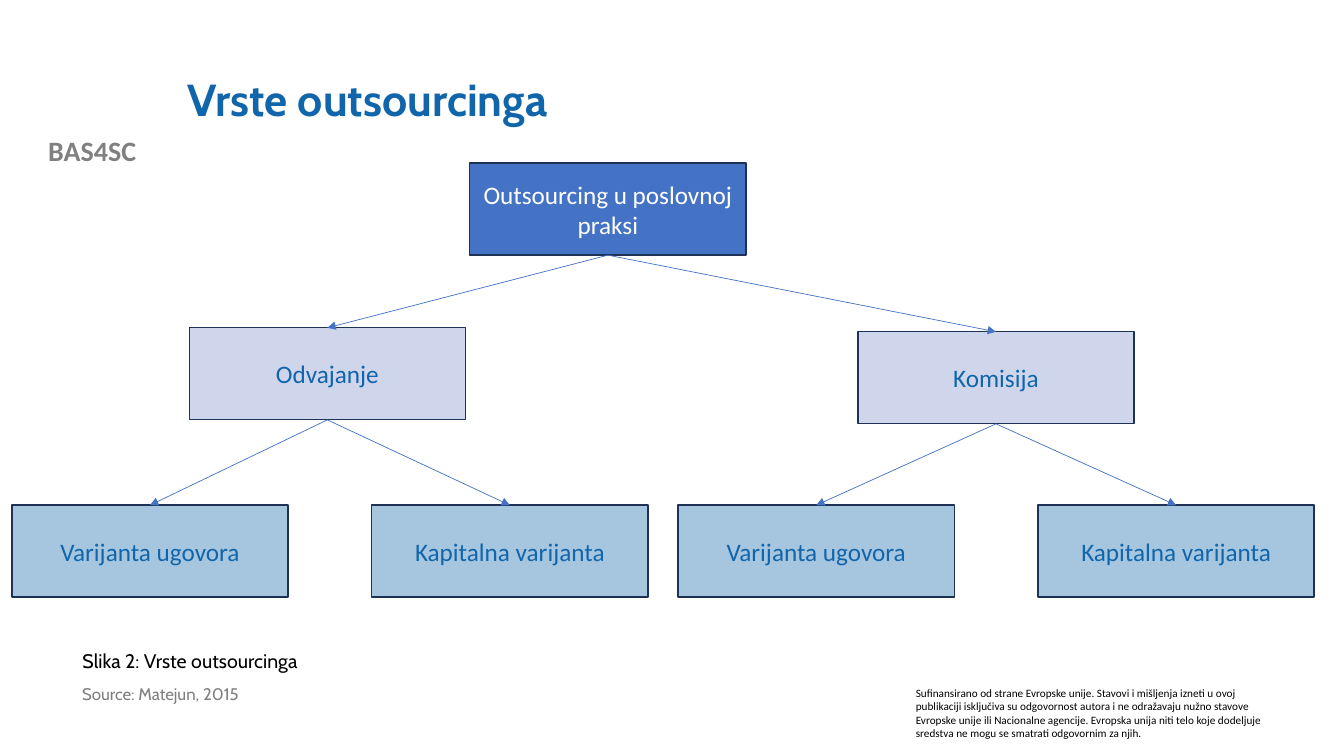
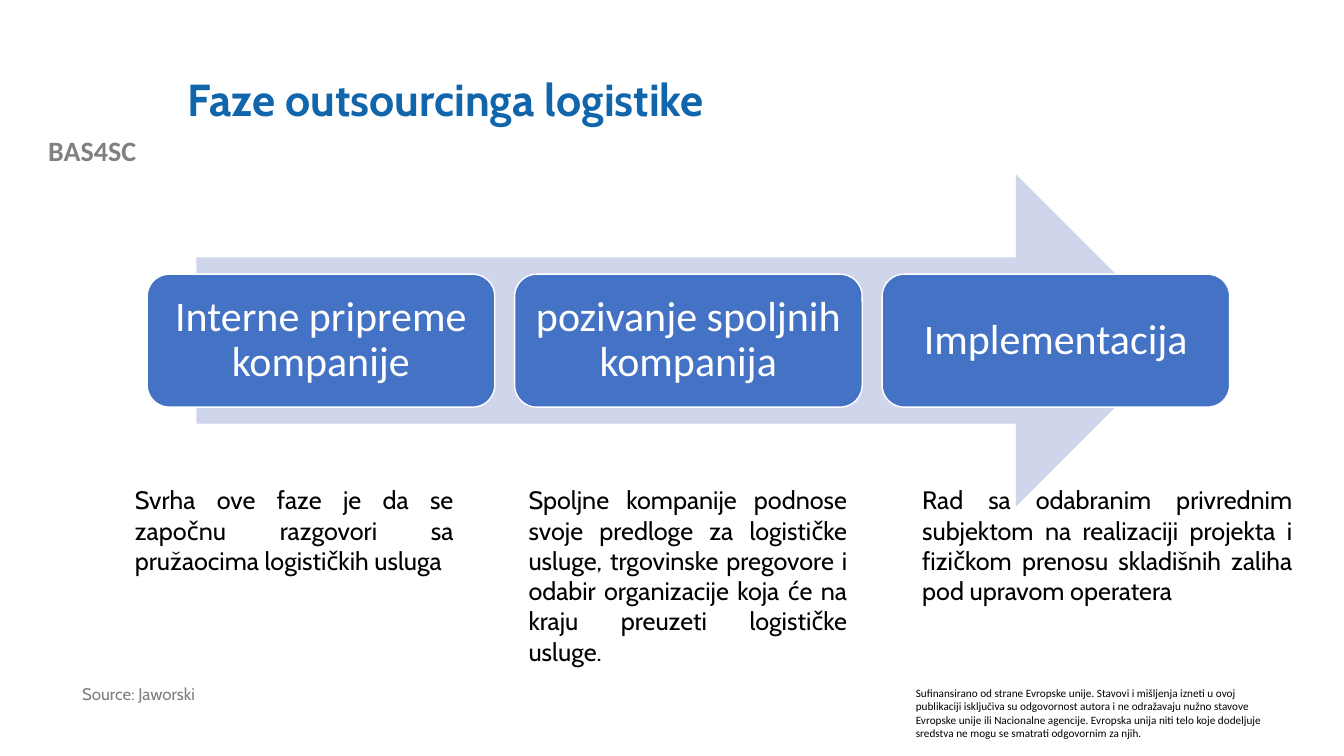
from pptx import Presentation
from pptx.dml.color import RGBColor
from pptx.enum.shapes import MSO_CONNECTOR, MSO_SHAPE
from pptx.enum.text import MSO_ANCHOR, PP_ALIGN
from pptx.oxml.ns import qn
from pptx.util import Cm, Pt
from lxml import etree

RECT, ROUND = MSO_SHAPE.RECTANGLE, MSO_SHAPE.ROUNDED_RECTANGLE
ARROW, LINE = MSO_SHAPE.RIGHT_ARROW, MSO_CONNECTOR.STRAIGHT
MID, TOP = MSO_ANCHOR.MIDDLE, MSO_ANCHOR.TOP
LEFT, CENTER, FULL = PP_ALIGN.LEFT, PP_ALIGN.CENTER, PP_ALIGN.JUSTIFY
SIDES = ("left", "top", "right", "bottom")

HUES = {
    "title": "1065AB", "brand": "808080", "source": "7F7F7F",
    "black": "000000", "white": "FFFFFF", "blue": "4472C4",
    "pale": "CFD5EA", "sky": "A6C6E0", "edge": "1E3256",
}

# Text styles: font values, colour, alignment, line spacing, anchor
STYLES = {
    "title": (dict(name="Cabin", size=Pt(32), bold=True), "title", LEFT, 0.9, MID),
    "brand": (dict(name="Calibri", size=Pt(20), bold=True), "brand", CENTER, 1.0, TOP),
    "legal": (dict(name="Calibri", size=Pt(8)), "black", LEFT, 1.0, TOP),
    "source": (dict(name="Cabin", size=Pt(12)), "source", LEFT, 0.9, TOP),
    "caption": (dict(name="Cabin", size=Pt(14)), "black", LEFT, 1.0, TOP),
    "body": (dict(name="Cabin", size=Pt(18)), "black", FULL, 1.0, TOP),
    "root": (dict(name="Calibri", size=Pt(18)), "white", CENTER, 1.0, MID),
    "node": (dict(name="Calibri", size=Pt(18)), "title", CENTER, 1.0, MID),
    "phase": (dict(name="Calibri", size=Pt(30)), "white", CENTER, 0.9, MID),
}

BRAND = "BAS4SC"
LEGAL = (
    "Sufinansirano od strane Evropske unije. Stavovi i mišljenja izneti u ovoj "
    "publikaciji isključiva su odgovornost autora i ne odražavaju nužno stavove "
    "Evropske unije ili Nacionalne agencije. Evropska unija niti telo koje "
    "dodeljuje sredstva ne mogu se smatrati odgovornim za njih."
)

# Tree: text, left, top, fill, style, children (cm)
LEAF = 12.73


def pair(left, right):
    return [("Varijanta ugovora", left, LEAF, "sky", "node", []),
            ("Kapitalna varijanta", right, LEAF, "sky", "node", [])]


TREE = ("Outsourcing u poslovnoj praksi", 11.84, 4.11, "blue", "root", [
    ("Odvajanje", 4.77, 8.26, "pale", "node", pair(0.3, 9.37)),
    ("Komisija", 21.62, 8.36, "pale", "node", pair(17.09, 26.16)),
])
NODE = (6.96, 2.32)

# Phases: name, note, note width (cm)
PHASES = [
    ("Interne pripreme kompanije",
     "Svrha ove faze je da se započnu razgovori sa pružaocima "
     "logističkih usluga", 8.53),
    ("pozivanje spoljnih kompanija",
     "Spoljne kompanije podnose svoje predloge za logističke usluge, "
     "trgovinske pregovore i odabir organizacije koja će na kraju preuzeti "
     "logističke usluge.", 8.53),
    ("Implementacija",
     "Rad sa odabranim privrednim subjektom na realizaciji projekta i fizičkom "
     "prenosu skladišnih zaliha pod upravom operatera", 9.83),
]


def color(key):
    return RGBColor.from_string(HUES[key])


def write(shape, text, style):
    font, hue, align, space, anchor = STYLES[style]
    frame = shape.text_frame
    frame.word_wrap = True
    frame.vertical_anchor = anchor
    para = frame.paragraphs[0]
    para.text = text
    para.alignment = align
    para.line_spacing = space
    for key, value in font.items():
        setattr(para.font, key, value)
    para.font.color.rgb = color(hue)


def add_text(slide, text, style, *box):
    write(slide.shapes.add_textbox(*map(Cm, box)), text, style)


def add_box(slide, kind, fill, edge, *box):
    shape = slide.shapes.add_shape(kind, *map(Cm, box))
    shape.shadow.inherit = False
    shape.fill.solid()
    shape.fill.fore_color.rgb = color(fill)
    if edge:
        shape.line.color.rgb = color(edge)
        shape.line.width = Pt(1)
    else:
        shape.line.fill.background()
    return shape


def link(slide, start, end):
    # Bottom centre of the parent to top centre of the child
    line = slide.shapes.add_connector(LINE, 0, 0, 0, 0)
    line.begin_connect(start, 2)
    line.end_connect(end, 0)
    line.line.color.rgb = color("blue")
    line.line.width = Pt(0.5)
    props = line._element.spPr
    etree.SubElement(props.find(qn("a:ln")), qn("a:tailEnd"), type="triangle")
    etree.SubElement(props, qn("a:effectLst"))


def add_node(slide, node):
    text, left, top, fill, style, kids = node
    shape = add_box(slide, RECT, fill, "edge", left, top, *NODE)
    write(shape, text, style)
    for kid in kids:
        link(slide, shape, add_node(slide, kid))
    return shape


def add_slide(deck, title, source):
    # Parts shared by all slides
    slide = deck.slides.add_slide(deck.slide_layouts[6])
    add_text(slide, BRAND, "brand", 0, 3.25, 4.65, 1.12)
    add_text(slide, LEGAL, "legal", 22.83, 17.17, 9.35, 1.63)
    add_text(slide, title, "title", 4.47, 1.02, 27.08, 3.1)
    add_text(slide, source, "source", 1.82, 17.17, 12.73, 1.32)
    return slide


def add_phases(slide):
    add_box(slide, ARROW, "pale", None, 4.95, 4.39, 24.84, 8.38)
    for i, (name, note, width) in enumerate(PHASES):
        shape = add_box(slide, ROUND, "blue", "white",
                        3.71 + i * 9.26, 6.91, 8.76, 3.35)
        for side in SIDES:
            setattr(shape.text_frame, "margin_" + side, Cm(0.3))
        write(shape, name, "phase")
        add_text(slide, note, "body", 3.15 + i * 9.92, 12.09, width, 4.88)


def main():
    deck = Presentation()
    deck.slide_width, deck.slide_height = Cm(33.87), Cm(19.05)

    # Types of outsourcing
    slide = add_slide(deck, "Vrste outsourcinga", "Source: Matejun, 2015")
    add_node(slide, TREE)
    add_text(slide, "Slika 2: Vrste outsourcinga", "caption", 1.83, 16.23, 11.15, 0.86)

    # Phases of logistics outsourcing
    slide = add_slide(deck, "Faze outsourcinga logistike", "Source: Jaworski")
    add_phases(slide)

    deck.save("out.pptx")


if __name__ == "__main__":
    main()
